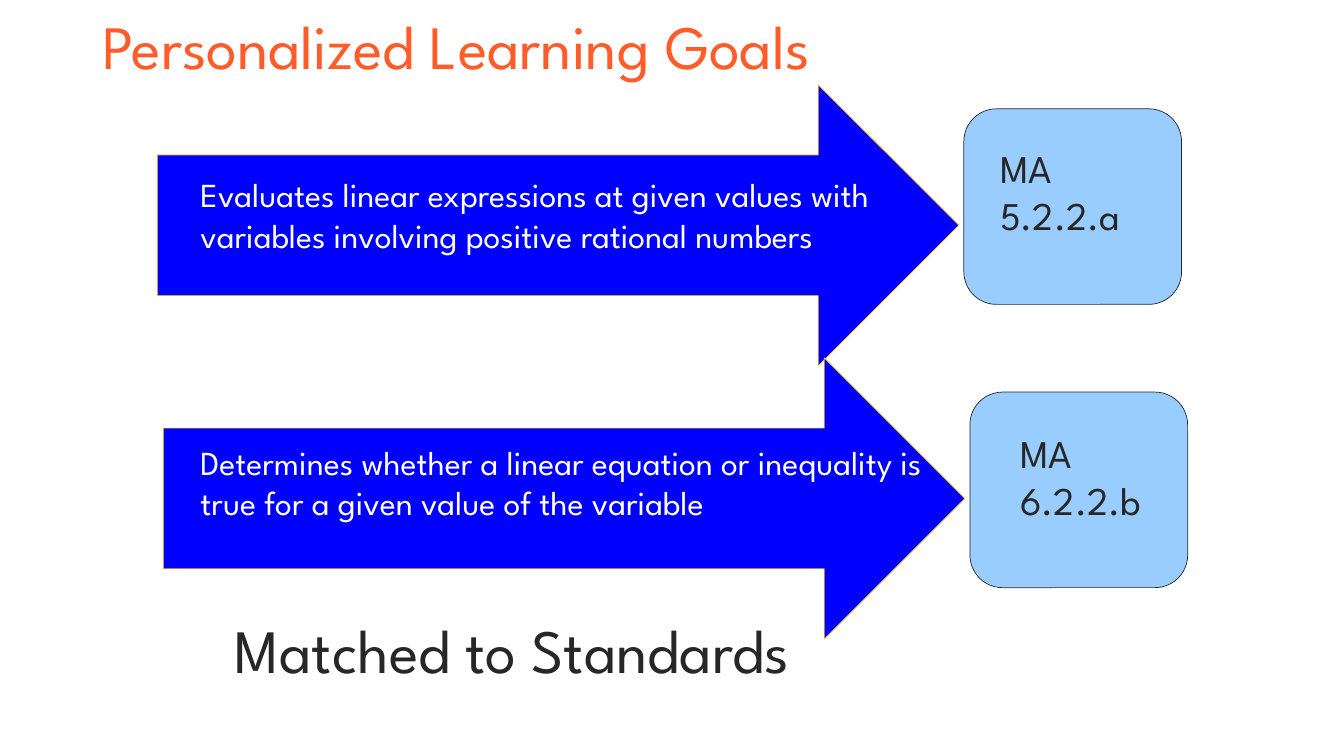
"""Build the slide of personalized learning goals matched to standards."""
from dataclasses import dataclass

from pptx import Presentation
from pptx.dml.color import RGBColor
from pptx.enum.shapes import MSO_SHAPE
from pptx.enum.text import MSO_ANCHOR, PP_ALIGN
from pptx.util import Inches, Pt

ARROW = MSO_SHAPE.RIGHT_ARROW
ROUNDED = MSO_SHAPE.ROUNDED_RECTANGLE
RECTANGLE = MSO_SHAPE.RECTANGLE
TOP, MIDDLE = MSO_ANCHOR.TOP, MSO_ANCHOR.MIDDLE
LEFT = PP_ALIGN.LEFT


@dataclass(frozen=True)
class Theme:
    """Colours, font and type sizes of the slide."""
    font: str = "League Spartan"
    orange: str = "FF5C29"
    blue: str = "0000FF"
    gold: str = "FFCA08"
    sky: str = "99CCFF"
    ink: str = "272727"
    white: str = "FFFFFF"
    heading_size: int = 44
    code_size: int = 28
    goal_size: int = 24
    line_width: float = 0.5


THEME = Theme()

GOALS = [
    ("Evaluates linear expressions at given values with variables "
     "involving positive rational numbers", (1.56, 0.84), 1.68),
    ("Determines whether a linear equation or inequality is true "
     "for a given value of the variable", (1.62, 3.55), 4.33),
]
STANDARDS = [
    ("MA 5.2.2.a", (9.56, 1.08), (9.82, 1.38)),
    ("MA 6.2.2.b", (9.62, 3.89), (10.02, 4.21)),
]


def write(frame, words, size, color, anchor=TOP, line_spacing=None):
    """Put one left-aligned run of words into a text frame."""
    frame.word_wrap = True
    frame.vertical_anchor = anchor
    paragraph = frame.paragraphs[0]
    paragraph.alignment = LEFT
    if line_spacing:
        paragraph.line_spacing = line_spacing
    run = paragraph.add_run()
    run.text = words
    run.font.name = THEME.font
    run.font.size = Pt(size)
    run.font.color.rgb = RGBColor.from_string(color)


def add_text(slide, box, words, size, color, **layout):
    """Add a text box holding one run of words."""
    label = slide.shapes.add_textbox(*map(Inches, box))
    write(label.text_frame, words, size, color, **layout)


def add_block(slide, preset, box, fill, outline=None):
    """Add a filled preset shape, with a thin outline if one is given."""
    block = slide.shapes.add_shape(preset, *map(Inches, box))
    block.shadow.inherit = False
    block.fill.solid()
    block.fill.fore_color.rgb = RGBColor.from_string(fill)
    if outline:
        block.line.color.rgb = RGBColor.from_string(outline)
        block.line.width = Pt(THEME.line_width)
    else:
        block.line.fill.background()
    return block


def add_goal(slide, goal, arrow_corner, text_top):
    """Add an arrow with its learning goal."""
    add_block(slide, ARROW, (*arrow_corner, 7.95, 2.79), THEME.blue, THEME.gold)
    add_text(slide, (1.89, text_top, 7.4, 1.31), goal, THEME.goal_size, THEME.white)


def add_standard(slide, code, card_corner, code_corner):
    """Add a rounded card with the code of its standard."""
    add_block(slide, ROUNDED, (*card_corner, 2.16, 1.94), THEME.sky, THEME.ink)
    panel = add_block(slide, RECTANGLE, (*code_corner, 1.69, 1.35), THEME.sky)
    write(panel.text_frame, code, THEME.code_size, THEME.ink)


def main():
    """Build and save the slide."""
    deck = Presentation()
    deck.slide_width, deck.slide_height = Inches(13.33), Inches(7.5)
    slide = deck.slides.add_slide(deck.slide_layouts[6])
    add_text(slide, (0.92, -0.23, 11.5, 1.45), "Personalized Learning Goals",
             THEME.heading_size, THEME.orange, anchor=MIDDLE, line_spacing=0.9)
    for goal in GOALS:
        add_goal(slide, *goal)
    for standard in STANDARDS:
        add_standard(slide, *standard)
    add_text(slide, (2.23, 6.02, 8.93, 0.84), "Matched to Standards",
             THEME.heading_size, THEME.ink)
    deck.save("out.pptx")


if __name__ == "__main__":
    main()
